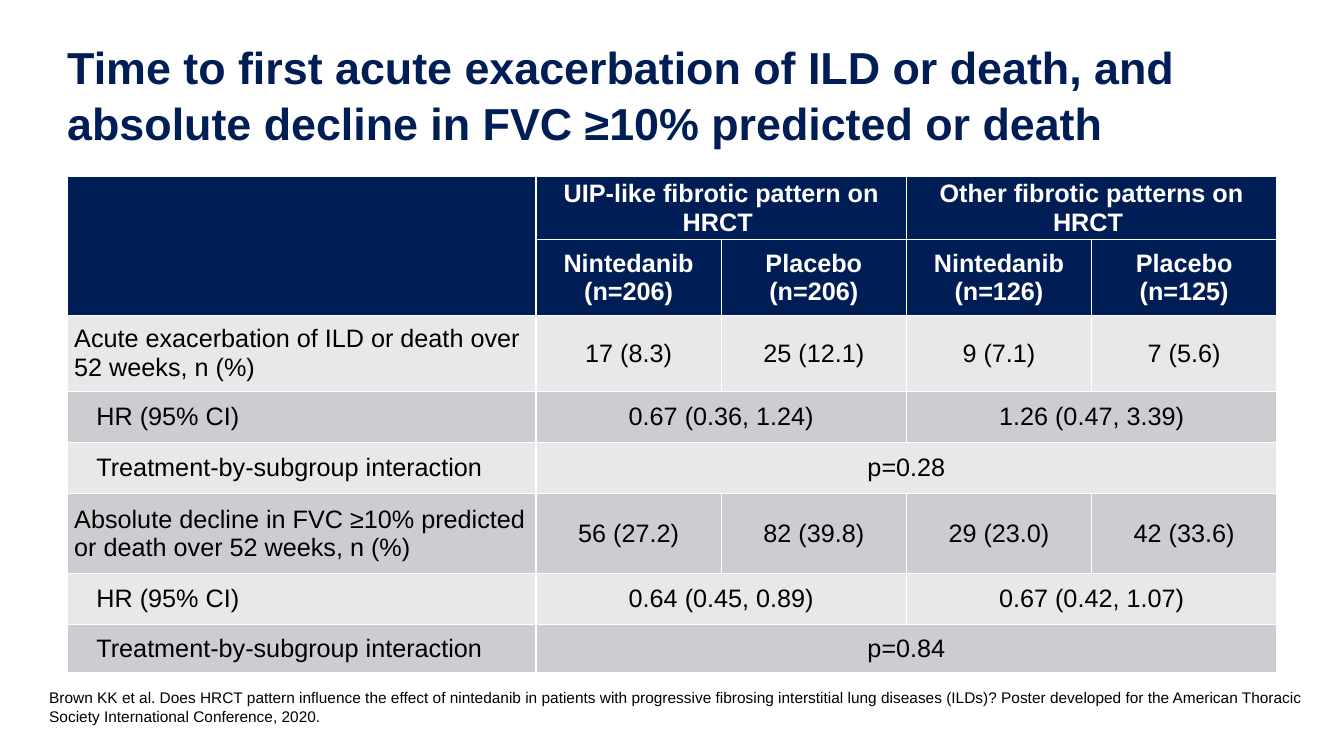
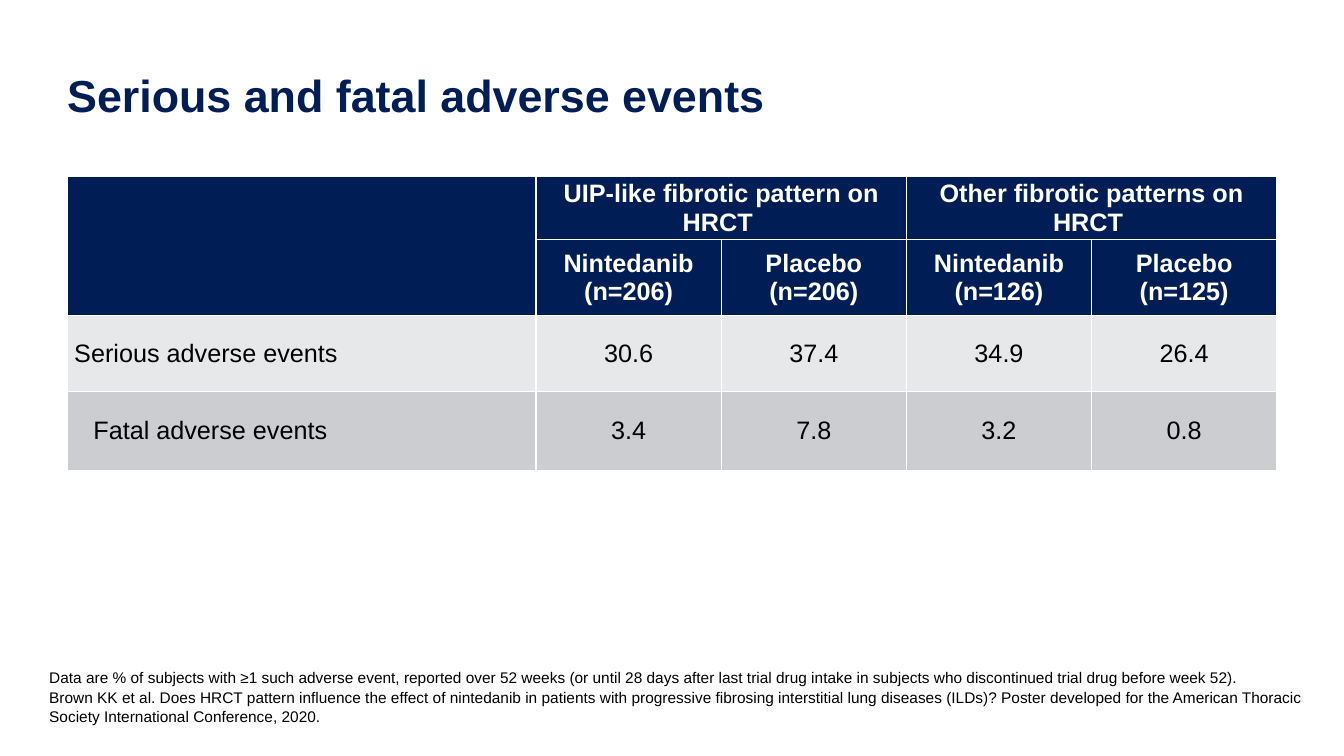
from dataclasses import dataclass

from lxml import etree
from pptx import Presentation
from pptx import util as u
from pptx.dml.color import RGBColor
from pptx.enum import text
from pptx.oxml.ns import qn


@dataclass(frozen=True)
class Theme:
    font: str = "Arial"
    navy: str = "001E55"
    white: str = "FFFFFF"
    black: str = "000000"
    bands: tuple = ("E7E8E9", "CCCDD1")
    title_size: int = 32
    table_size: int = 18
    note_size: int = 11
    line_spacing: float = 1.05


theme = Theme()

# Page grid: a 5% margin each side, one label column and four equal arm columns
WIDTH, HEIGHT = u.Inches(13.33), u.Inches(7.5)
MARGIN = int(WIDTH * 0.05)
CONTENT = WIDTH - 2 * MARGIN
LABEL_COLUMN = u.Inches(4.65)
ARMS = 4
ARM_COLUMN = (CONTENT - LABEL_COLUMN) // ARMS
TABLE_TOP = u.Inches(1.75)
NOTE_LEFT, NOTE_BOTTOM = u.Inches(0.39), u.Inches(7.25)
NOTE_LINE, NOTE_INSETS = u.Inches(0.19), u.Inches(0.1)

# Rows: height, label, label indent, values (fewer values share the arm columns)
HEADER = [
    (0.63, "", 0, ["UIP-like fibrotic pattern on HRCT ", "Other fibrotic patterns on HRCT "]),
    (0.75, "", 0, ["Nintedanib (n=206)", "Placebo (n=206)",
                   "Nintedanib (n=126)", "Placebo (n=125)"]),
]
CITATION = (
    "Brown KK et al. Does HRCT pattern influence the effect of nintedanib in patients "
    "with progressive fibrosing interstitial lung diseases (ILDs)? Poster developed for "
    "the American Thoracic Society International Conference, 2020."
)
SLIDES = [
    {
        "title": "Time to first acute exacerbation of ILD or death, and "
                 "absolute decline in FVC ≥10% predicted or death",
        "rows": [
            (0.75, "Acute exacerbation of ILD or death over 52 weeks, n (%)", 0,
             ["17 (8.3)", "25 (12.1)", "9 (7.1)", "7 (5.6)"]),
            (0.51, "HR (95% CI)", 0.22, ["0.67 (0.36, 1.24)", "1.26 (0.47, 3.39)"]),
            (0.51, "Treatment-by-subgroup interaction", 0.22, ["p=0.28"]),
            (0.79, "Absolute decline in FVC ≥10% predicted or death over 52 weeks, n (%)", 0,
             ["56 (27.2)", "82 (39.8)", "29 (23.0)", "42 (33.6)"]),
            (0.51, "HR (95% CI)", 0.22, ["0.64 (0.45, 0.89)", "0.67 (0.42, 1.07)"]),
            (0.47, "Treatment-by-subgroup interaction", 0.22, ["p=0.84"]),
        ],
        "notes": [CITATION],
        "note_lines": 2,
    },
    {
        "title": "Serious and fatal adverse events",
        "rows": [
            (0.75, "Serious adverse events", 0, ["30.6", "37.4", "34.9", "26.4"]),
            (0.79, "Fatal adverse events", 0.19, ["3.4", "7.8", "3.2", "0.8"]),
        ],
        "notes": [
            "Data are % of subjects with ≥1 such adverse event, reported over 52 weeks "
            "(or until 28 days after last trial drug intake in subjects who discontinued "
            "trial drug before week 52).",
            CITATION,
        ],
        "note_lines": 3,
    },
]


def write(paragraph, words, size, color, bold=False):
    run = paragraph.add_run()
    run.text = words
    run.font.name = theme.font
    run.font.size = u.Pt(size)
    run.font.bold = bold
    run.font.color.rgb = RGBColor.from_string(color)


def style_cell(cell, fill):
    cell.margin_left = cell.margin_right = u.Inches(0.07)
    cell.margin_top = cell.margin_bottom = 0
    cell.vertical_anchor = text.MSO_ANCHOR.MIDDLE
    properties = cell._tc.get_or_add_tcPr()
    for side in ("a:lnL", "a:lnR", "a:lnT", "a:lnB"):
        border = etree.SubElement(properties, qn(side), w=str(u.Pt(1)))
        paint = etree.SubElement(border, qn("a:solidFill"))
        etree.SubElement(paint, qn("a:srgbClr"), val=theme.white)
    cell.fill.solid()
    cell.fill.fore_color.rgb = RGBColor.from_string(fill)


deck = Presentation()
deck.slide_width, deck.slide_height = WIDTH, HEIGHT

for content in SLIDES:
    slide = deck.slides.add_slide(deck.slide_layouts[6])

    # Title
    title = slide.shapes.add_textbox(MARGIN, int(HEIGHT * 0.04), CONTENT, u.Inches(1.25)).text_frame
    title.word_wrap = True
    title.vertical_anchor = text.MSO_ANCHOR.MIDDLE
    title.margin_left = title.margin_right = title.margin_top = title.margin_bottom = 0
    title.paragraphs[0].line_spacing = theme.line_spacing
    write(title.paragraphs[0], content["title"], theme.title_size, theme.navy, bold=True)

    # Results table
    rows = HEADER + content["rows"]
    table_height = u.Inches(sum(row[0] for row in rows))
    results = slide.shapes.add_table(
        len(rows), 1 + ARMS, MARGIN, TABLE_TOP, CONTENT, table_height).table
    results.horz_banding = False
    for number, column in enumerate(results.columns):
        column.width = ARM_COLUMN if number else LABEL_COLUMN

    for r, (row_height, label, indent, values) in enumerate(rows):
        results.rows[r].height = u.Inches(row_height)
        is_header = r < len(HEADER)
        fill = theme.navy if is_header else theme.bands[(r - len(HEADER)) % 2]
        ink = theme.white if is_header else theme.black
        for c in range(1 + ARMS):
            style_cell(results.cell(r, c), fill)

        if label:
            row_label = results.cell(r, 0).text_frame.paragraphs[0]
            if indent:
                row_label._p.get_or_add_pPr().set("marL", str(u.Inches(indent)))
            write(row_label, label, theme.table_size, ink)

        span = ARMS // len(values)
        for v, value in enumerate(values):
            first = 1 + v * span
            cell = results.cell(r, first)
            if span > 1:
                cell.merge(results.cell(r, first + span - 1))
            paragraph = cell.text_frame.paragraphs[0]
            paragraph.alignment = text.PP_ALIGN.CENTER
            write(paragraph, value, theme.table_size, ink, bold=is_header)
    results.cell(0, 0).merge(results.cell(len(HEADER) - 1, 0))

    # Source notes, standing on a common bottom line
    note_height = content["note_lines"] * NOTE_LINE + NOTE_INSETS
    notes = slide.shapes.add_textbox(
        NOTE_LEFT, NOTE_BOTTOM - note_height, WIDTH - NOTE_LEFT, note_height).text_frame
    notes.word_wrap = True
    notes.vertical_anchor = text.MSO_ANCHOR.BOTTOM
    for n, note in enumerate(content["notes"]):
        paragraph = notes.add_paragraph() if n else notes.paragraphs[0]
        paragraph.line_spacing = theme.line_spacing
        write(paragraph, note, theme.note_size, theme.black)

deck.save("out.pptx")
